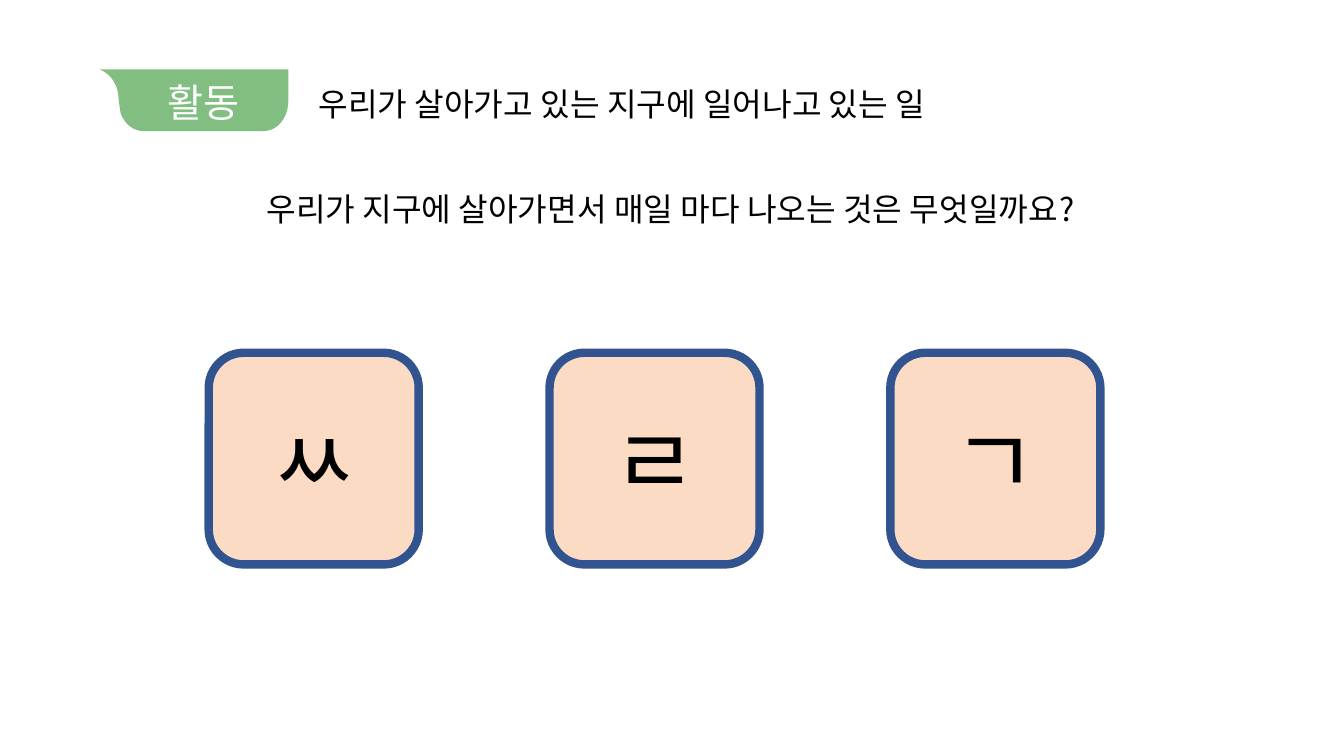
from dataclasses import dataclass

from pptx import Presentation
from pptx.dml.color import RGBColor
from pptx.enum.shapes import MSO_SHAPE
from pptx.enum.text import MSO_ANCHOR, MSO_AUTO_SIZE, PP_ALIGN
from pptx.util import Inches, Pt

ROUNDED = MSO_SHAPE.ROUNDED_RECTANGLE
MIDDLE = MSO_ANCHOR.MIDDLE
NO_FIT = MSO_AUTO_SIZE.NONE
LEFT, CENTER = PP_ALIGN.LEFT, PP_ALIGN.CENTER
WIDTH, HEIGHT = Inches(13.33), Inches(7.5)
COLS, ROWS = 64, 36
CURVE_STEPS = 12


@dataclass(frozen=True)
class Theme:
    green: str = "82BE82"
    peach: str = "FBDBC3"
    blue: str = "31538F"
    black: str = "000000"
    white: str = "FFFFFF"
    latin: str = "Lato"
    korean: str = "Noto Sans CJK KR"
    card: str = "Roboto"
    tag_size: int = 28
    text_size: int = 23
    card_size: int = 66
    border: int = 6


THEME = Theme()


def rgb(value):
    return RGBColor.from_string(value)


def grid(col, row, cols, rows):
    return (round(WIDTH * col / COLS), round(HEIGHT * row / ROWS),
            round(WIDTH * cols / COLS), round(HEIGHT * rows / ROWS))


def write(s, text, font, size, color=THEME.black, align=CENTER, wrap=True):
    tf = s.text_frame
    tf.word_wrap = wrap
    tf.auto_size = NO_FIT
    tf.vertical_anchor = MIDDLE
    p = tf.paragraphs[0]
    p.text = text
    p.alignment = align
    p.font.name = font
    p.font.size = Pt(size)
    p.font.color.rgb = rgb(color)


def curve(start, c1, c2, end):
    points = []
    for i in range(1, CURVE_STEPS + 1):
        t = i / CURVE_STEPS
        u = 1 - t
        points.append(tuple(
            u**3 * a + 3 * u * u * t * b + 3 * u * t * t * c + t**3 * d
            for a, b, c, d in zip(start, c1, c2, end)))
    return points


def add_tag(slide, text):
    left, top, width, height = grid(4.75, 3.31, 8.98, 2.93)
    outline = [(1, 0), (1, 0.51)]
    outline += curve((1, 0.51), (1, 0.79), (0.94, 1), (0.87, 1))
    outline += [(0.23, 1)]
    outline += curve((0.23, 1), (0.18, 1), (0.13, 0.89), (0.11, 0.7))
    outline += [(0.1, 0.49)]
    outline += curve((0.1, 0.49), (0.1, 0.26), (0.06, 0.07), (0, 0))
    group = slide.shapes.add_group_shape()
    builder = group.shapes.build_freeform(left, top)
    builder.add_line_segments(
        [(round(left + x * width), round(top + y * height)) for x, y in outline])
    s = builder.convert_to_shape()
    s.shadow.inherit = False
    s.fill.solid()
    s.fill.fore_color.rgb = rgb(THEME.green)
    s.line.fill.background()
    label = group.shapes.add_textbox(*grid(6.82, 3.46, 5.76, 2.74))
    write(label, text, THEME.latin, THEME.tag_size, THEME.white)


def add_title(slide, text):
    s = slide.shapes.title
    s.left, s.top, s.width, s.height = grid(14.69, 3.79, 31.92, 2.3)
    write(s, text, THEME.latin, THEME.text_size, align=LEFT, wrap=False)


def add_question(slide, text):
    s = slide.shapes.add_textbox(*grid(10.9, 8.74, 42.05, 2.35))
    write(s, text, THEME.korean, THEME.text_size, wrap=False)


def add_card(slide, index, letter):
    s = slide.shapes.add_shape(ROUNDED, *grid(9.94 + 16.23 * index, 16.8, 10, 10.08))
    s.shadow.inherit = False
    s.fill.solid()
    s.fill.fore_color.rgb = rgb(THEME.peach)
    s.line.color.rgb = rgb(THEME.blue)
    s.line.width = Pt(THEME.border)
    write(s, letter, THEME.card, THEME.card_size)


def main():
    prs = Presentation()
    prs.slide_width, prs.slide_height = WIDTH, HEIGHT
    slide = prs.slides.add_slide(prs.slide_layouts.get_by_name("Title Only"))
    add_tag(slide, "활동")
    add_title(slide, "우리가 살아가고 있는 지구에 일어나고 있는 일")
    add_question(slide, "우리가 지구에 살아가면서 매일 마다 나오는 것은 무엇일까요?")
    for index, letter in enumerate("ㅆㄹㄱ"):
        add_card(slide, index, letter)
    prs.save("out.pptx")


if __name__ == "__main__":
    main()
